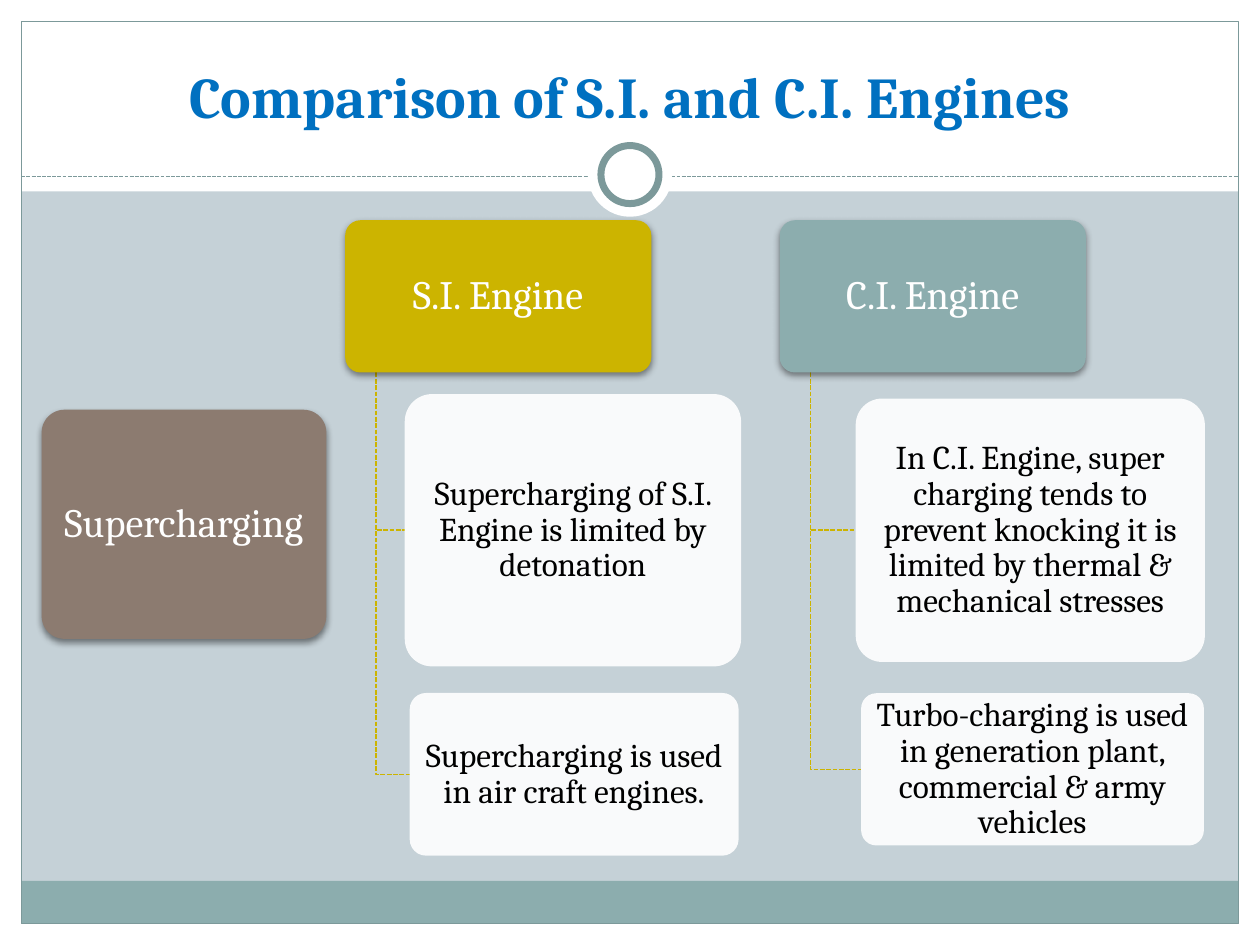
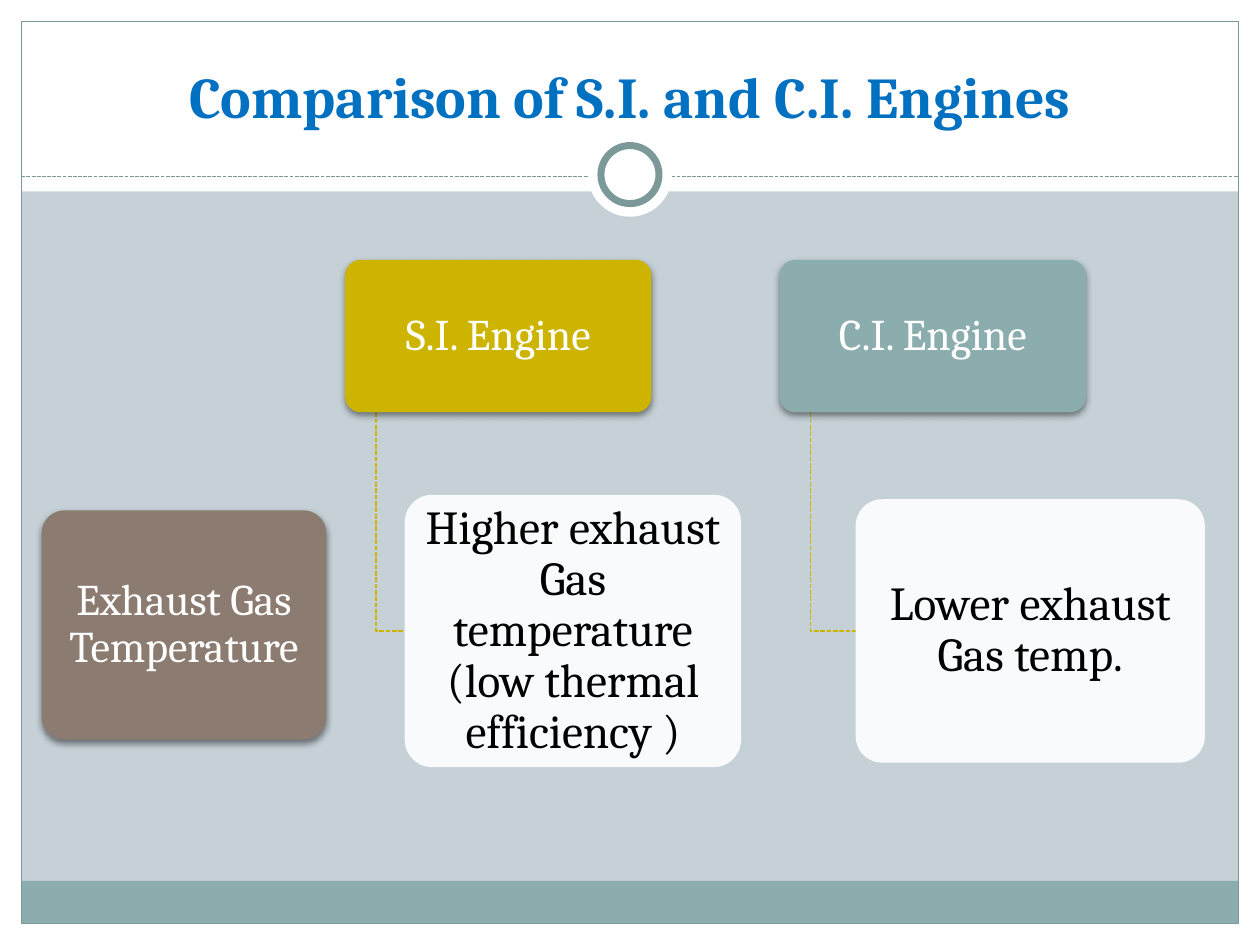
from lxml.etree import SubElement
from pptx import Presentation
from pptx.dml.color import RGBColor
from pptx.enum.dml import MSO_LINE
from pptx.enum.shapes import MSO_CONNECTOR, MSO_SHAPE
from pptx.enum.text import MSO_ANCHOR, PP_ALIGN
from pptx.oxml.ns import qn
from pptx.util import Cm, Pt

COLORS = {
    "background": "C5D1D7", "white": "FFFFFF", "black": "000000",
    "title": "0070C0", "teal": "8CADAE", "frame": "7C999A",
    "gold": "CCB400", "brown": "8C7B70",
}
WIDTH, HEIGHT = 25.4, 19.05
MARGIN = 0.43
INNER_WIDTH = WIDTH - 2 * MARGIN
TITLE_BAND = 3.86
FOOTER_TOP, FOOTER_HEIGHT = 17.76, 0.86
RULE_Y = 3.56
RING_CENTER = (WIDTH / 2, 3.52)

HEADER_WIDTH, HEADER_HEIGHT = 6.17, 3.07
STEM_INSET = HEADER_WIDTH / 10
TOPIC_BOX = {"left": 0.84, "width": 5.74, "height": 4.62, "rise": 0.12}

# Each card: left, width, height
ENGINES = [
    {"name": "S.I. Engine", "left": 6.96, "color": "gold",
     "cards": [(8.16, 6.78, 5.49), (8.26, 6.63, 3.28)]},
    {"name": "C.I. Engine", "left": 15.72, "color": "teal",
     "cards": [(17.25, 7.04, 5.31), (17.36, 6.91, 3.07)]},
]

# Each engine has one (middle, text) pair per card
COMPARISONS = [
    {"topic": "Supercharging", "header_top": 4.44, "card_middle": 10.69,
     "header_size": 23, "card_size": 19, "card_inset": (0.11, 0.08),
     "points": [
         [(10.69, "Supercharging of S.I. Engine is limited by detonation"),
          (15.61, "Supercharging is used in air craft engines.")],
         [(10.69, "In C.I. Engine, super charging tends to prevent knocking "
                  "it is limited by thermal & mechanical stresses"),
          (15.51, "Turbo-charging is used in generation plant, commercial "
                  "& army vehicles")],
     ]},
    {"topic": "Exhaust Gas Temperature", "header_top": 5.24, "card_middle": 12.72,
     "header_size": 25, "card_size": 27, "card_inset": (0.16, 0.1),
     "points": [
         [(12.72, "Higher exhaust Gas temperature (low thermal efficiency )")],
         [(12.72, "Lower exhaust Gas temp.")],
     ]},
]


def draw(slide, preset, box, fill=None, line_width=None):
    shape = slide.shapes.add_shape(preset, *[Cm(length) for length in box])
    shape.shadow.inherit = False
    if fill:
        shape.fill.solid()
        shape.fill.fore_color.rgb = RGBColor.from_string(COLORS[fill])
    else:
        shape.fill.background()
    if line_width:
        shape.line.color.rgb = RGBColor.from_string(COLORS["frame"])
        shape.line.width = Pt(line_width)
    else:
        shape.line.fill.background()
    if preset == MSO_SHAPE.ROUNDED_RECTANGLE:
        shape.adjustments[0] = 0.1
    return shape


def write(shape, text, size, color, inset=(0.13, 0.08),
          anchor=MSO_ANCHOR.MIDDLE, bold=False, spacing=0.9):
    frame = shape.text_frame
    across, down = [Cm(length) for length in inset]
    frame_format = {"word_wrap": True, "vertical_anchor": anchor,
                    "margin_left": across, "margin_right": across,
                    "margin_top": down, "margin_bottom": down}
    paragraph = frame.paragraphs[0]
    run = paragraph.add_run()
    run.text = text
    run.font.color.rgb = RGBColor.from_string(COLORS[color])
    for target, values in (
        (frame, frame_format),
        (paragraph, {"alignment": PP_ALIGN.CENTER, "line_spacing": spacing}),
        (run.font, {"name": "Cambria", "size": Pt(size), "bold": bold}),
    ):
        for attribute, value in values.items():
            setattr(target, attribute, value)


deck = Presentation()
deck.slide_width, deck.slide_height = Cm(WIDTH), Cm(HEIGHT)

for comparison in COMPARISONS:
    slide = deck.slides.add_slide(deck.slide_layouts[6])
    slide.background.fill.solid()
    slide.background.fill.fore_color.rgb = RGBColor.from_string(COLORS["background"])

    # White border, footer band and frame
    for box, fill, line_width in (
        ((0, HEIGHT - MARGIN, WIDTH, MARGIN), "white", None),
        ((0, 0, WIDTH, TITLE_BAND), "white", None),
        ((0, 0, MARGIN, HEIGHT), "white", None),
        ((WIDTH - MARGIN, 0, MARGIN, HEIGHT), "white", None),
        ((MARGIN, FOOTER_TOP, INNER_WIDTH, FOOTER_HEIGHT), "teal", None),
        ((MARGIN, MARGIN, INNER_WIDTH, HEIGHT - 2 * MARGIN), None, 0.75),
    ):
        draw(slide, MSO_SHAPE.RECTANGLE, box, fill, line_width)

    # Dashed rule with the ring on top
    rule = slide.shapes.add_connector(
        MSO_CONNECTOR.STRAIGHT, Cm(MARGIN), Cm(RULE_Y), Cm(WIDTH - MARGIN), Cm(RULE_Y))
    rule.line.color.rgb = RGBColor.from_string(COLORS["frame"])
    rule.line.width = Pt(0.75)
    rule.line.dash_style = MSO_LINE.SQUARE_DOT
    SubElement(rule._element.spPr, qn("a:effectLst"))
    for diameter, line_width in ((1.7, None), (1.17, 4)):
        corner = [center - diameter / 2 for center in RING_CENTER]
        draw(slide, MSO_SHAPE.OVAL, (*corner, diameter, diameter), "white", line_width)

    title = slide.shapes.add_textbox(Cm(0.84), Cm(0.64), Cm(23.72), Cm(2.12))
    write(title, "Comparison of S.I. and C.I. Engines", 33, "title",
          inset=(0.25, 0.13), anchor=MSO_ANCHOR.BOTTOM, bold=True, spacing=1.0)

    # Engine columns: elbows and cards hang from each header
    header_top = comparison["header_top"]
    header_bottom = header_top + HEADER_HEIGHT
    labels = []
    for engine, points in zip(ENGINES, comparison["points"]):
        labels.append((engine["name"], engine["color"],
                       (engine["left"], header_top, HEADER_WIDTH, HEADER_HEIGHT)))
        stem_x = engine["left"] + STEM_INSET
        for (left, width, height), (middle, text) in zip(engine["cards"], points):
            builder = slide.shapes.build_freeform(Cm(stem_x), Cm(header_bottom))
            builder.add_line_segments(
                [(Cm(stem_x), Cm(middle)), (Cm(left), Cm(middle))], close=False)
            elbow = builder.convert_to_shape()
            elbow.shadow.inherit = False
            elbow.fill.background()
            elbow.line.color.rgb = RGBColor.from_string(COLORS["gold"])
            elbow.line.width = Pt(0.9)
            elbow.line.dash_style = MSO_LINE.SQUARE_DOT

            card = draw(slide, MSO_SHAPE.ROUNDED_RECTANGLE,
                        (left, middle - height / 2, width, height), "white")
            tint = card._element.spPr.find(qn("a:solidFill")).find(qn("a:srgbClr"))
            SubElement(tint, qn("a:alpha"), val="90000")
            write(card, text, comparison["card_size"], "black", comparison["card_inset"])

    topic_top = comparison["card_middle"] - TOPIC_BOX["rise"] - TOPIC_BOX["height"] / 2
    labels.append((comparison["topic"], "brown",
                   (TOPIC_BOX["left"], topic_top, TOPIC_BOX["width"], TOPIC_BOX["height"])))

    # Coloured labels with a soft shadow below
    for text, fill, box in labels:
        label = draw(slide, MSO_SHAPE.ROUNDED_RECTANGLE, box, fill)
        effects = label._element.spPr.find(qn("a:effectLst"))
        shadow = SubElement(effects, qn("a:outerShdw"), blurRad=str(Pt(4)),
                            dist=str(Pt(2)), dir="5400000", rotWithShape="0")
        shade = SubElement(shadow, qn("a:srgbClr"), val=COLORS["black"])
        SubElement(shade, qn("a:alpha"), val="45000")
        write(label, text, comparison["header_size"], "white")

deck.save("out.pptx")
